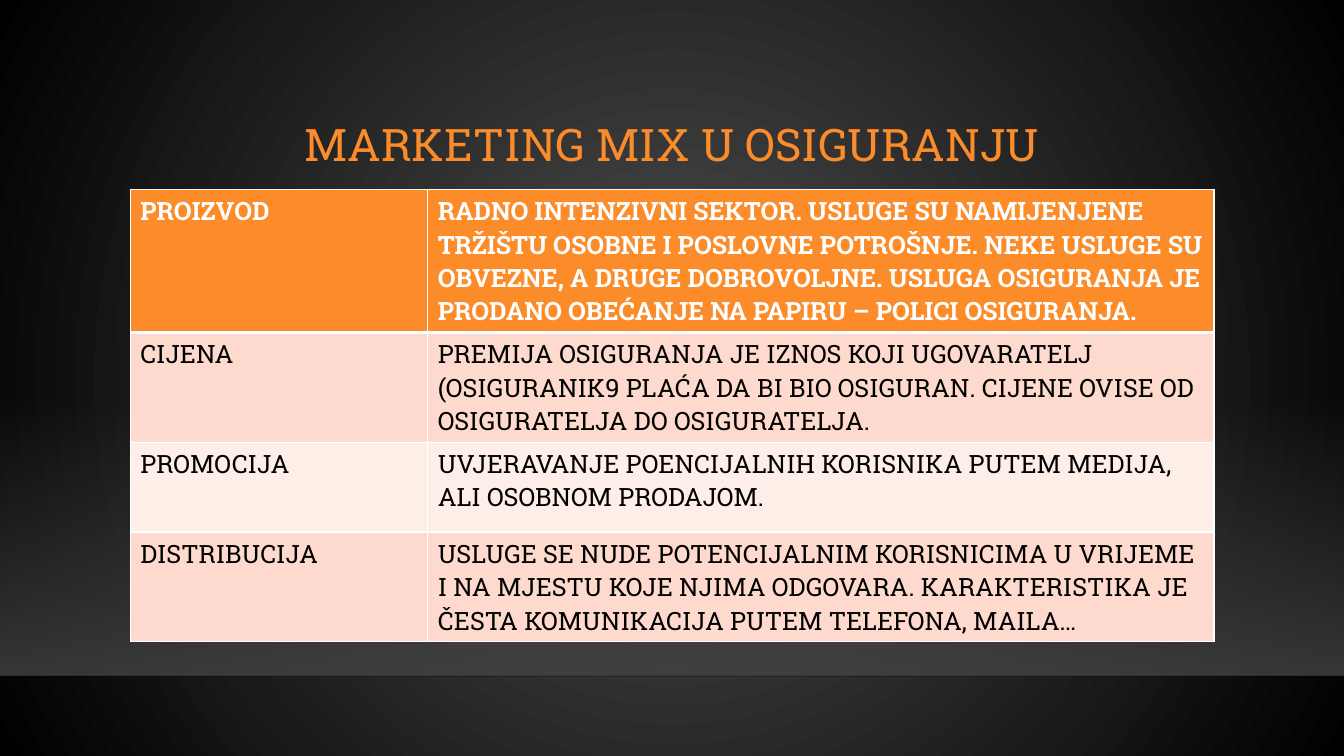
from typing import NamedTuple

from lxml.etree import SubElement
from pptx import Presentation
from pptx.dml.color import RGBColor
from pptx.enum.shapes import MSO_CONNECTOR, MSO_SHAPE
from pptx.enum.text import MSO_ANCHOR, PP_ALIGN
from pptx.oxml import parse_xml
from pptx.oxml.ns import nsdecls, qn
from pptx.util import Pt

COLORS = {
    "accent": "FB8C29",
    "white": "FFFFFF",
    "black": "000000",
    "row_dark": "FDDACD",
    "row_light": "FEEEE8",
    "glow": "505050",
    "floor": "454545",
    "floor_edge": "000001",
}
FONT = "Roboto Slab"
SLIDE_WIDTH, SLIDE_HEIGHT = 960, 540
COLUMN_WIDTHS = (212.4, 561.6)


class Stop(NamedTuple):
    position: int
    color: str
    opacity: int = 100


class MixRow(NamedTuple):
    element: str
    description: str
    height: float
    fill: str
    text: str = "black"
    bold: bool = False
    bottom_border: float = 1


MIX_ROWS = [
    MixRow("PROIZVOD",
           "RADNO INTENZIVNI SEKTOR. USLUGE SU NAMIJENJENE TRŽIŠTU OSOBNE I POSLOVNE "
           "POTROŠNJE. NEKE USLUGE SU OBVEZNE, A DRUGE DOBROVOLJNE. USLUGA OSIGURANJA JE "
           "PRODANO OBEĆANJE NA PAPIRU – POLICI OSIGURANJA.",
           102.2, "accent", "white", True, 3),
    MixRow("CIJENA",
           "PREMIJA OSIGURANJA JE IZNOS KOJI UGOVARATELJ (OSIGURANIK9 PLAĆA DA BI BIO "
           "OSIGURAN. CIJENE OVISE OD OSIGURATELJA DO OSIGURATELJA.",
           78.5, "row_dark"),
    MixRow("PROMOCIJA",
           "UVJERAVANJE POENCIJALNIH KORISNIKA PUTEM MEDIJA, ALI OSOBNOM PRODAJOM.",
           64.1, "row_light"),
    MixRow("DISTRIBUCIJA",
           "USLUGE SE NUDE POTENCIJALNIM KORISNICIMA U VRIJEME I NA MJESTU KOJE NJIMA "
           "ODGOVARA. KARAKTERISTIKA JE ČESTA KOMUNIKACIJA PUTEM TELEFONA, MAILA…",
           78.5, "row_dark"),
]


def rgb(name: str) -> RGBColor:
    return RGBColor.from_string(COLORS[name])


def gradient_xml(stops: list[Stop], direction: str) -> str:
    stop_xml = "".join(
        f'<a:gs pos="{stop.position * 1000}"><a:srgbClr val="{COLORS[stop.color]}">'
        f'<a:alpha val="{stop.opacity * 1000}"/></a:srgbClr></a:gs>'
        for stop in stops)
    return (f'<a:gradFill {nsdecls("a")} rotWithShape="1"><a:gsLst>{stop_xml}</a:gsLst>'
            f'{direction}</a:gradFill>')


def set_font(para, size: float, color: str, bold: bool = False) -> None:
    para.font.name = FONT
    para.font.size = Pt(size)
    para.font.bold = bold
    para.font.color.rgb = rgb(color)


def set_border(cell, side: str, width: float) -> None:
    properties = cell._tc.get_or_add_tcPr()
    line = SubElement(properties, qn(f"a:{side}"), w=str(Pt(width)))
    fill = SubElement(line, qn("a:solidFill"))
    SubElement(fill, qn("a:srgbClr"), val=COLORS["white"])


def draw_background(page) -> None:
    center = ('<a:path path="circle"><a:fillToRect l="50000" t="50000" '
              'r="50000" b="50000"/></a:path>')
    fill = gradient_xml([Stop(0, "glow"), Stop(100, "black")], center)
    page.element.cSld.insert(0, parse_xml(
        f'<p:bg {nsdecls("p")}><p:bgPr>{fill}<a:effectLst {nsdecls("a")}/></p:bgPr></p:bg>'))


def draw_floor(page) -> None:
    floor = page.shapes.add_shape(MSO_SHAPE.RECTANGLE, 0, Pt(285), Pt(SLIDE_WIDTH), Pt(197.5))
    floor.shadow.inherit = False
    floor.line.fill.background()
    fill = gradient_xml([Stop(0, "floor", 0), Stop(100, "floor", 80)],
                        '<a:lin ang="5400000" scaled="0"/>')
    floor.element.spPr.find(qn("a:prstGeom")).addnext(parse_xml(fill))

    edge = page.shapes.add_connector(
        MSO_CONNECTOR.STRAIGHT, 0, Pt(483), Pt(SLIDE_WIDTH), Pt(483))
    edge.line.width = Pt(1)
    edge.line.color.rgb = rgb("floor_edge")
    properties = edge.element.spPr
    SubElement(next(properties.iter(qn("a:srgbClr"))), qn("a:alpha"), val="20000")
    SubElement(properties, qn("a:effectLst"))


def draw_title(page, title: str) -> None:
    box = page.shapes.add_textbox(Pt(114.5), Pt(63.4), Pt(731.5), Pt(82.8))
    frame = box.text_frame
    frame.word_wrap = True
    frame.vertical_anchor = MSO_ANCHOR.MIDDLE
    para = frame.paragraphs[0]
    para.text = title
    para.alignment = PP_ALIGN.CENTER
    para.line_spacing = 0.9
    set_font(para, 32, "accent")


def draw_table(page, rows: list[MixRow]) -> None:
    table = page.shapes.add_table(
        len(rows), len(COLUMN_WIDTHS), Pt(93.1), Pt(135.2),
        Pt(sum(COLUMN_WIDTHS)), Pt(sum(row.height for row in rows))).table
    for column, width in zip(table.columns, COLUMN_WIDTHS):
        column.width = Pt(width)
    top_border = 1
    for table_row, row in zip(table.rows, rows):
        table_row.height = Pt(row.height)
        borders = {"lnL": 1, "lnR": 1, "lnT": top_border, "lnB": row.bottom_border}
        for cell, text in zip(table_row.cells, (row.element, row.description)):
            para = cell.text_frame.paragraphs[0]
            para.text = text
            set_font(para, 18, row.text, row.bold)
            # Borders come before the fill in the cell properties
            for side, width in borders.items():
                set_border(cell, side, width)
            cell.fill.solid()
            cell.fill.fore_color.rgb = rgb(row.fill)
        top_border = row.bottom_border


def main() -> None:
    deck = Presentation()
    deck.slide_width, deck.slide_height = Pt(SLIDE_WIDTH), Pt(SLIDE_HEIGHT)
    page = deck.slides.add_slide(deck.slide_layouts[6])
    # Backdrop
    draw_background(page)
    draw_floor(page)
    # Content
    draw_title(page, "MARKETING MIX U OSIGURANJU")
    draw_table(page, MIX_ROWS)
    deck.save("out.pptx")


if __name__ == "__main__":
    main()
